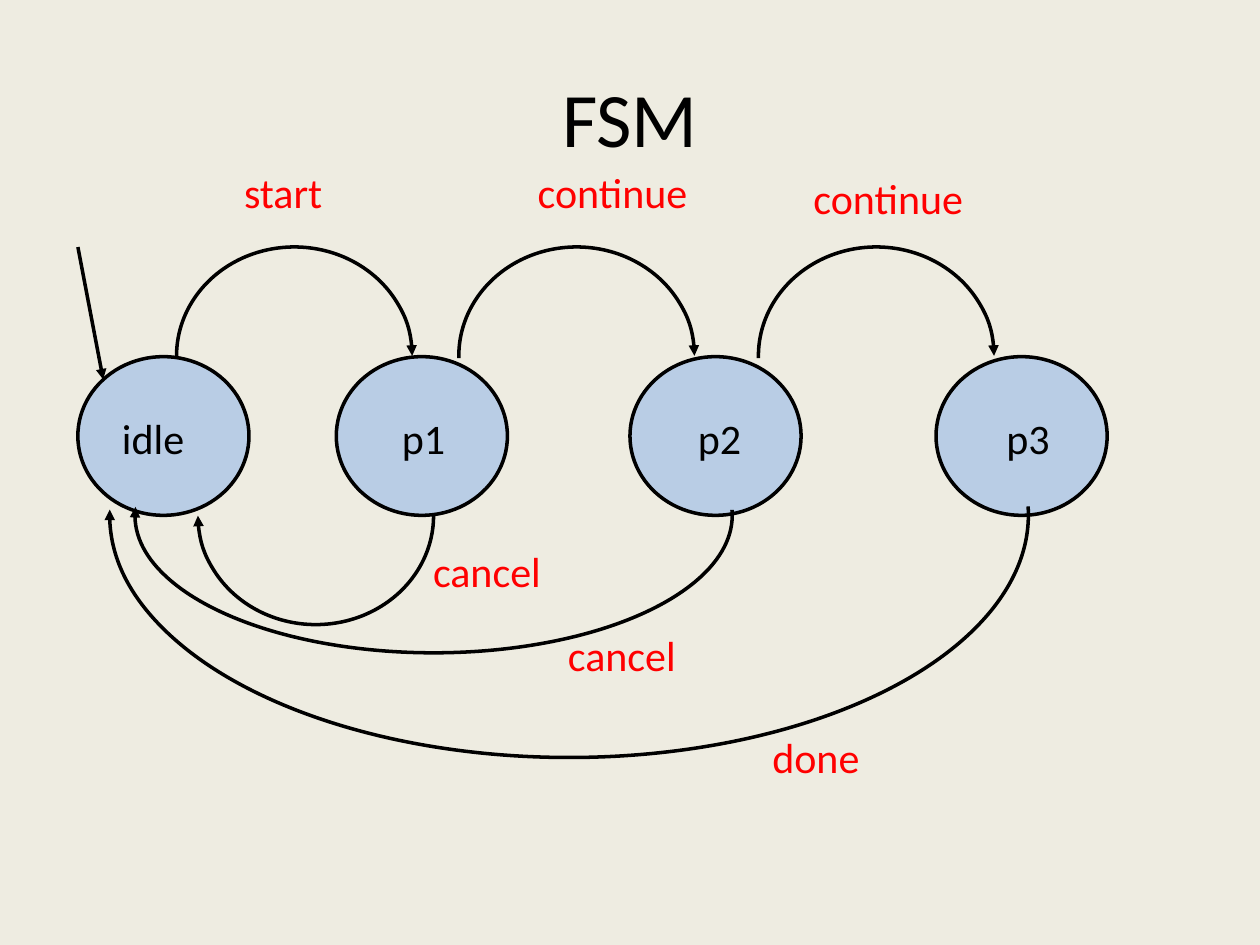
from dataclasses import dataclass

from lxml import etree
from pptx import Presentation
from pptx.dml.color import RGBColor
from pptx.enum.shapes import MSO_CONNECTOR, MSO_SHAPE
from pptx.enum.text import MSO_ANCHOR, MSO_AUTO_SIZE, PP_ALIGN
from pptx.oxml.ns import qn
from pptx.util import Cm, Pt

STRAIGHT = MSO_CONNECTOR.STRAIGHT
CIRCLE = MSO_SHAPE.FLOWCHART_CONNECTOR
ARC = MSO_SHAPE.ARC
FIT_TEXT = MSO_AUTO_SIZE.SHAPE_TO_FIT_TEXT
NO_FIT = MSO_AUTO_SIZE.NONE
MIDDLE = MSO_ANCHOR.MIDDLE
CENTER = PP_ALIGN.CENTER

COLORS = {
    "background": "EEECE1",
    "state": "B9CDE5",
    "ink": "000000",
    "event": "FF0000",
}
FONT = "Calibri"
STATE_TOP, STATE_WIDTH, STATE_HEIGHT = 7.19, 3.45, 3.2
STATE_LABEL_TOP = 8.2
LABEL_HEIGHT = 1.27
ARC_START = 107.364  # just under a half turn
FORWARD_TOP, FORWARD_WIDTH, FORWARD_HEIGHT = 4.98, 4.75, 4.39


@dataclass
class Label:
    text: str
    left: float
    top: float
    width: float
    color: str = "event"


@dataclass
class State:
    left: float
    label: Label


@dataclass
class Transition:
    left: float
    label: Label
    top: float = FORWARD_TOP
    width: float = FORWARD_WIDTH
    height: float = FORWARD_HEIGHT
    arc_end: float = 0
    rotation: int = 0


STATES = [
    State(1.57, Label("idle", 2.21, STATE_LABEL_TOP, 1.78, "ink")),
    State(6.78, Label("p1", 7.85, STATE_LABEL_TOP, 1.4, "ink")),
    State(12.7, Label("p2", 13.82, STATE_LABEL_TOP, 1.4, "ink")),
    State(18.87, Label("p3", 20.04, STATE_LABEL_TOP, 1.4, "ink")),
]
TRANSITIONS = [
    Transition(3.56, Label("start", 4.67, 3.23, 2.11)),
    Transition(9.25, Label("continue", 10.59, 3.23, 3.56)),
    Transition(15.29, Label("continue", 16.15, 3.35, 3.56)),
    Transition(3.99, Label("cancel", 8.48, 10.87, 2.72), top=8.2, rotation=180),
    Transition(2.72, Label("cancel", 11.2, 12.57, 2.72), 7.62, 12.04, 5.54, 0.982, 180),
    Transition(2.21, Label("done", 15.32, 14.63, 2.29), 5.49, 18.52, 9.78, 0.403, 180),
]


def rgb(name: str) -> RGBColor:
    return RGBColor.from_string(COLORS[name])


def style_font(paragraph, size: int, color: str) -> None:
    font = paragraph.font
    font.name, font.size = FONT, Pt(size)
    font.color.rgb = rgb(color)


def style_line(line) -> None:
    line.color.rgb = rgb("ink")
    line.width = Pt(2)


def add_arrowhead(line) -> None:
    etree.SubElement(line._get_or_add_ln(), qn("a:tailEnd"), type="triangle")


def draw_state(slide, state: State) -> None:
    circle = slide.shapes.add_shape(
        CIRCLE, Cm(state.left), Cm(STATE_TOP), Cm(STATE_WIDTH), Cm(STATE_HEIGHT)
    )
    circle.shadow.inherit = False
    circle.fill.solid()
    circle.fill.fore_color.rgb = rgb("state")
    style_line(circle.line)


def draw_transition(slide, transition: Transition) -> None:
    arc = slide.shapes.add_shape(
        ARC, Cm(transition.left), Cm(transition.top),
        Cm(transition.width), Cm(transition.height),
    )
    arc.adjustments[0] = ARC_START
    arc.adjustments[1] = transition.arc_end
    arc.rotation = transition.rotation
    arc.shadow.inherit = False
    arc.fill.background()
    style_line(arc.line)
    add_arrowhead(arc.line)


def draw_entry_arrow(slide) -> None:
    entry = slide.shapes.add_connector(STRAIGHT, Cm(1.57), Cm(4.98), Cm(2.08), Cm(7.65))
    style_line(entry.line)
    add_arrowhead(entry.line)
    etree.SubElement(entry._element.spPr, qn("a:effectLst"))


def draw_label(slide, label: Label) -> None:
    box = slide.shapes.add_textbox(
        Cm(label.left), Cm(label.top), Cm(label.width), Cm(LABEL_HEIGHT)
    )
    frame = box.text_frame
    frame.word_wrap = False
    frame.auto_size = FIT_TEXT
    frame.text = label.text
    style_font(frame.paragraphs[0], 24, label.color)


def set_title(slide, text: str) -> None:
    title = slide.shapes.title
    title.left, title.top = Cm(1.27), Cm(0.76)
    title.width, title.height = Cm(22.86), Cm(3.18)
    frame = title.text_frame
    frame.text = text
    frame.auto_size = NO_FIT
    frame.vertical_anchor = MIDDLE
    frame.paragraphs[0].alignment = CENTER
    style_font(frame.paragraphs[0], 44, "ink")


def main() -> None:
    deck = Presentation()
    deck.slide_width, deck.slide_height = Cm(25.4), Cm(19.05)
    slide = deck.slides.add_slide(deck.slide_layouts[5])
    slide.background.fill.solid()
    slide.background.fill.fore_color.rgb = rgb("background")

    set_title(slide, "FSM")
    for state in STATES:
        draw_state(slide, state)
    for transition in TRANSITIONS:
        draw_transition(slide, transition)
    draw_entry_arrow(slide)
    for labelled in STATES + TRANSITIONS:
        draw_label(slide, labelled.label)

    deck.save("out.pptx")


if __name__ == "__main__":
    main()
